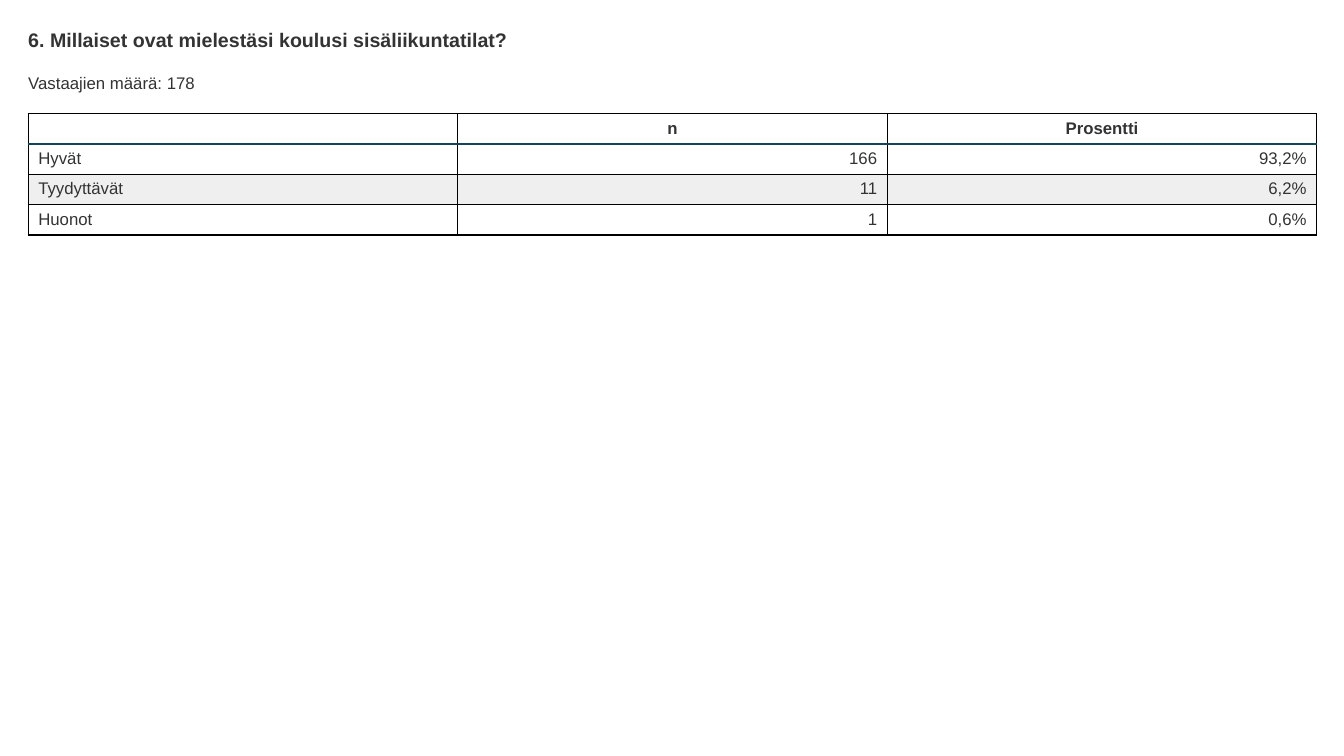
from lxml.etree import SubElement
from pptx import Presentation
from pptx.dml.color import RGBColor
from pptx.enum.text import MSO_ANCHOR, MSO_AUTO_SIZE, PP_ALIGN
from pptx.oxml.ns import qn
from pptx.util import Inches, Pt

TEXT = RGBColor(0x33, 0x33, 0x33)
WHITE = RGBColor(0xFF, 0xFF, 0xFF)
BAND = RGBColor(0xEF, 0xEF, 0xEF)
GRID = RGBColor(0x00, 0x00, 0x00)
RULE = RGBColor(0x12, 0x44, 0x56)

LEFT, WIDTH = 0.28, 12.78
ROW_HEIGHT = 0.3
ROWS = [
    ("", "n", "Prosentti"),
    ("Hyvät", "166", "93,2%"),
    ("Tyydyttävät", "11", "6,2%"),
    ("Huonot", "1", "0,6%"),
]


class SurveySlide:
    """Holds the text style and the slide being filled."""

    font_name = "Arial"

    def __init__(self, prs):
        self.s = prs.slides.add_slide(prs.slide_layouts[6])

    def paragraph(self, p, text, size=12, bold=False, align=PP_ALIGN.LEFT):
        if text:
            p.add_run().text = text
        else:
            # An empty cell takes its line height from the end mark
            SubElement(p._p, qn("a:endParaRPr"), sz=str(size * 100))
        p.alignment = align
        p.font.name = self.font_name
        p.font.size = Pt(size)
        p.font.bold = bold
        p.font.color.rgb = TEXT

    def text(self, top, height, text, **style):
        sp = self.s.shapes.add_textbox(
            Inches(LEFT), Inches(top), Inches(WIDTH), Inches(height))
        tf = sp.text_frame
        tf.margin_left = tf.margin_right = tf.margin_top = tf.margin_bottom = 0
        tf.word_wrap = True
        tf.auto_size = MSO_AUTO_SIZE.SHAPE_TO_FIT_TEXT
        self.paragraph(tf.paragraphs[0], text, **style)

    def border(self, cell, side, color, width):
        ln = SubElement(cell._tc.get_or_add_tcPr(), qn(f"a:ln{side}"),
                        w=str(Pt(width)))
        fill = SubElement(ln, qn("a:solidFill"))
        SubElement(fill, qn("a:srgbClr"), val=str(color))

    def table(self, top, rows):
        table = self.s.shapes.add_table(
            len(rows), len(rows[0]), Inches(LEFT), Inches(top),
            Inches(WIDTH), Inches(ROW_HEIGHT * len(rows))).table
        table.horz_banding = False
        for i, row in enumerate(rows):
            for j, text in enumerate(row):
                cell = table.cell(i, j)
                # The header rule is shared by the first two rows
                for side in "LRTB":
                    ruled = (i, side) in ((0, "B"), (1, "T"))
                    self.border(cell, side, *((RULE, 2) if ruled else (GRID, 1)))
                cell.fill.solid()
                cell.fill.fore_color.rgb = BAND if i and i % 2 == 0 else WHITE
                cell.vertical_anchor = MSO_ANCHOR.TOP
                if i == 0:
                    align = PP_ALIGN.CENTER
                else:
                    align = PP_ALIGN.RIGHT if j else PP_ALIGN.LEFT
                self.paragraph(cell.text_frame.paragraphs[0], text,
                               bold=i == 0, align=align)


def main():
    prs = Presentation()
    prs.slide_width, prs.slide_height = Inches(13.33), Inches(7.5)
    slide = SurveySlide(prs)

    # Question and number of respondents
    slide.text(0.28, 0.23, "6. Millaiset ovat mielestäsi koulusi sisäliikuntatilat?",
               size=14, bold=True)
    slide.text(0.72, 0.2, "Vastaajien määrä: 178")

    # Answers
    slide.table(1.13, ROWS)

    prs.save("out.pptx")


if __name__ == "__main__":
    main()
